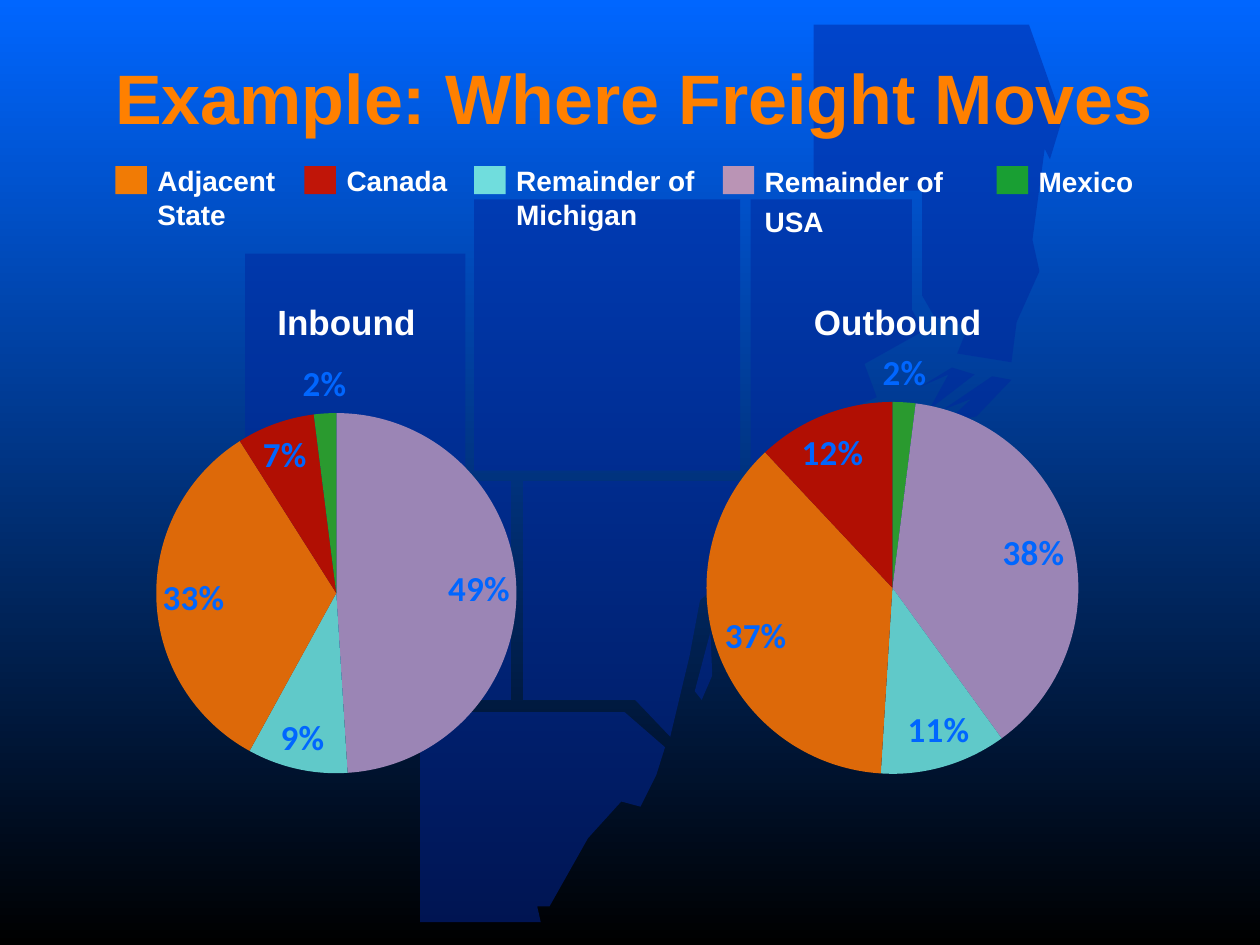
from lxml.etree import SubElement
from pptx import Presentation
from pptx.chart.data import CategoryChartData
from pptx.dml.color import RGBColor
from pptx.enum.chart import XL_CHART_TYPE, XL_LABEL_POSITION
from pptx.enum.shapes import MSO_SHAPE
from pptx.enum.text import MSO_ANCHOR, MSO_AUTO_SIZE, PP_ALIGN
from pptx.oxml import parse_xml
from pptx.oxml.ns import nsdecls, qn
from pptx.util import Pt

WHITE, ORANGE, BLUE, NAVY = "FFFFFF", "FF8000", "0066FF", "00279F"
ADJACENT, CANADA, MICHIGAN, USA, MEXICO = "DD6909", "B10F03", "60C9C9", "9B85B5", "2A9A2F"
UNUSED = "00CCCC"

# Map of simplified regions, in points
MAP_BLOCKS = [(140, 145, 126, 124), (271, 114, 152, 155), (143, 275, 149, 125)]
MAP_OUTLINES = [
    [(240, 407), (240, 527), (309, 527), (307, 518), (314, 518), (336, 479), (355, 458),
     (366, 461), (375, 443), (380, 427), (357, 407)],
    [(383, 421), (363, 400), (299, 400), (299, 275), (472, 275), (461, 306), (424, 322),
     (400, 343), (394, 375)],
    [(401, 400), (397, 395), (406, 361), (407, 386)],
    [(429, 114), (521, 114), (521, 177), (528, 189), (494, 208), (501, 227), (483, 235),
     (475, 269), (429, 269)],
    [(544, 210), (526, 221), (542, 214), (531, 234), (557, 214)],
    [(539, 234), (567, 215), (578, 217), (558, 238), (541, 241), (555, 228)],
    [(465, 109), (465, 14), (588, 14), (607, 68), (600, 91), (597, 85), (590, 137),
     (594, 155), (581, 184), (578, 207), (547, 202), (553, 187), (534, 181), (527, 169),
     (527, 109)],
]

# Legend: left edge, swatch colour, lines, line spacing
LEGEND = [
    (66, "F17B05", ["Adjacent", "State"], 1),
    (174, "C01508", ["Canada"], 1),
    (271, "70DDDD", ["Remainder of", "Michigan"], 1),
    (413, "BA94B5", ["Remainder of", "USA"], 1.2),
    (569.5, "199F33", ["Mexico"], 1.2),
]


def color(hex_string):
    return RGBColor.from_string(hex_string)


def paint(shape, fill, alpha=None):
    shape.shadow.inherit = False
    shape.fill.solid()
    shape.fill.fore_color.rgb = color(fill)
    shape.line.fill.background()
    if alpha is not None:
        tint = next(shape.element.iter(qn("a:srgbClr")))
        SubElement(tint, qn("a:alpha")).set("val", str(alpha * 1000))


def write(frame, lines, size, fill=WHITE, align=PP_ALIGN.LEFT, spacing=1,
          insets=(0, 0), wrap=True):
    frame.auto_size = MSO_AUTO_SIZE.NONE
    frame.word_wrap = wrap
    frame.vertical_anchor = MSO_ANCHOR.TOP
    frame.margin_left = frame.margin_right = Pt(insets[0])
    frame.margin_top = frame.margin_bottom = Pt(insets[1])
    for index, line in enumerate(lines):
        para = frame.add_paragraph() if index else frame.paragraphs[0]
        para.alignment = align
        para.line_spacing = spacing
        span = para.add_run()
        span.text = line
        span.font.name, span.font.size, span.font.bold = "Arial", Pt(size), True
        span.font.color.rgb = color(fill)


def add_text(page, box, lines, size, **style):
    shape = page.shapes.add_textbox(*map(Pt, box))
    write(shape.text_frame, lines, size, **style)


def add_background(page):
    fill = page.background.fill
    fill.gradient()
    fill.gradient_angle = 270
    for stop, shade in zip(fill.gradient_stops, (BLUE, "000000")):
        stop.color.rgb = color(shade)


def add_map(page):
    group = page.shapes.add_group_shape()
    for block in MAP_BLOCKS:
        paint(group.shapes.add_shape(MSO_SHAPE.RECTANGLE, *map(Pt, block)), NAVY, alpha=50)
    for start, *rest in MAP_OUTLINES:
        builder = group.shapes.build_freeform(*start, scale=Pt(1))
        builder.add_line_segments(rest, close=True)
        paint(builder.convert_to_shape(), NAVY, alpha=50)


def add_title(page, box, text):
    title = page.shapes.title
    title.left, title.top, title.width, title.height = map(Pt, box)
    write(title.text_frame, [text], 40, fill=ORANGE, align=PP_ALIGN.RIGHT,
          spacing=0.9, insets=(7.2, 6.5))
    # Bring the title in front of the map
    title.element.getparent().append(title.element)


def add_legend(page, top):
    for left, fill, lines, spacing in LEGEND:
        swatch = page.shapes.add_shape(MSO_SHAPE.RECTANGLE, Pt(left), Pt(top + 5), Pt(18), Pt(16))
        paint(swatch, fill)
        text_top = top if spacing > 1 else top + 3.6
        width = 9 * max(map(len, lines))
        add_text(page, (left + 24, text_top, width, 20 * spacing * len(lines)), lines, 16,
                 spacing=spacing, wrap=False)


def add_pie(page, box, diameter, slices):
    data = CategoryChartData()
    data.categories = [str(number + 1) for number in range(len(slices))]
    data.add_series("Series 1", [value for value, _ in slices])
    chart = page.shapes.add_chart(XL_CHART_TYPE.PIE, *map(Pt, box), data).chart
    chart.has_legend = chart.has_title = False
    chart.font.name, chart.font.size = "Times New Roman", Pt(10)
    chart.font.color.rgb = color(WHITE)

    plot = chart.plots[0]
    plot.vary_by_categories = True
    for index, (_, fill) in enumerate(slices):
        point = plot.series[0].points[index].format
        point.fill.solid()
        point.fill.fore_color.rgb = color(fill)
        point.line.fill.background()

    plot.has_data_labels = True
    labels = plot.data_labels
    labels.show_percentage, labels.show_value = True, False
    labels.number_format, labels.number_format_is_linked = "0%", False
    labels.position = XL_LABEL_POSITION.BEST_FIT
    labels.font.name, labels.font.size, labels.font.bold = "Calibri", Pt(20), True
    labels.font.color.rgb = color(BLUE)

    # Centre the pie in its box at the given diameter
    wide, high = diameter / box[2], diameter / box[3]
    area = chart.element.find(".//" + qn("c:plotArea"))
    for old in area.findall(qn("c:layout")):
        area.remove(old)
    area.insert(0, parse_xml(
        f'<c:layout {nsdecls("c")}><c:manualLayout><c:layoutTarget val="inner"/>'
        f'<c:xMode val="edge"/><c:yMode val="edge"/>'
        f'<c:x val="{(1 - wide) / 2:.3f}"/><c:y val="{(1 - high) / 2:.3f}"/>'
        f'<c:w val="{wide:.3f}"/><c:h val="{high:.3f}"/></c:manualLayout></c:layout>'))


def main():
    deck = Presentation()
    deck.slide_width, deck.slide_height = Pt(720), Pt(540)
    page = deck.slides.add_slide(deck.slide_layouts[5])
    add_background(page)
    add_map(page)
    add_title(page, (54, 30, 612, 96), "Example: Where Freight Moves")
    add_legend(page, 90)
    add_pie(page, (-24, 198, 432, 282), 206,
            [(None, UNUSED), (49, USA), (9, MICHIGAN), (33, ADJACENT), (7, CANADA), (2, MEXICO)])
    add_pie(page, (252, 192, 516, 288), 212.5,
            [(2, MEXICO), (38, USA), (11, MICHIGAN), (37, ADJACENT), (12, CANADA)])
    for left, width, heading in [(120, 156, "Inbound"), (438, 150, "Outbound")]:
        add_text(page, (left, 168, width, 32), [heading], 20,
                 align=PP_ALIGN.CENTER, insets=(3.6, 3.6))
    deck.save("out.pptx")


if __name__ == "__main__":
    main()
